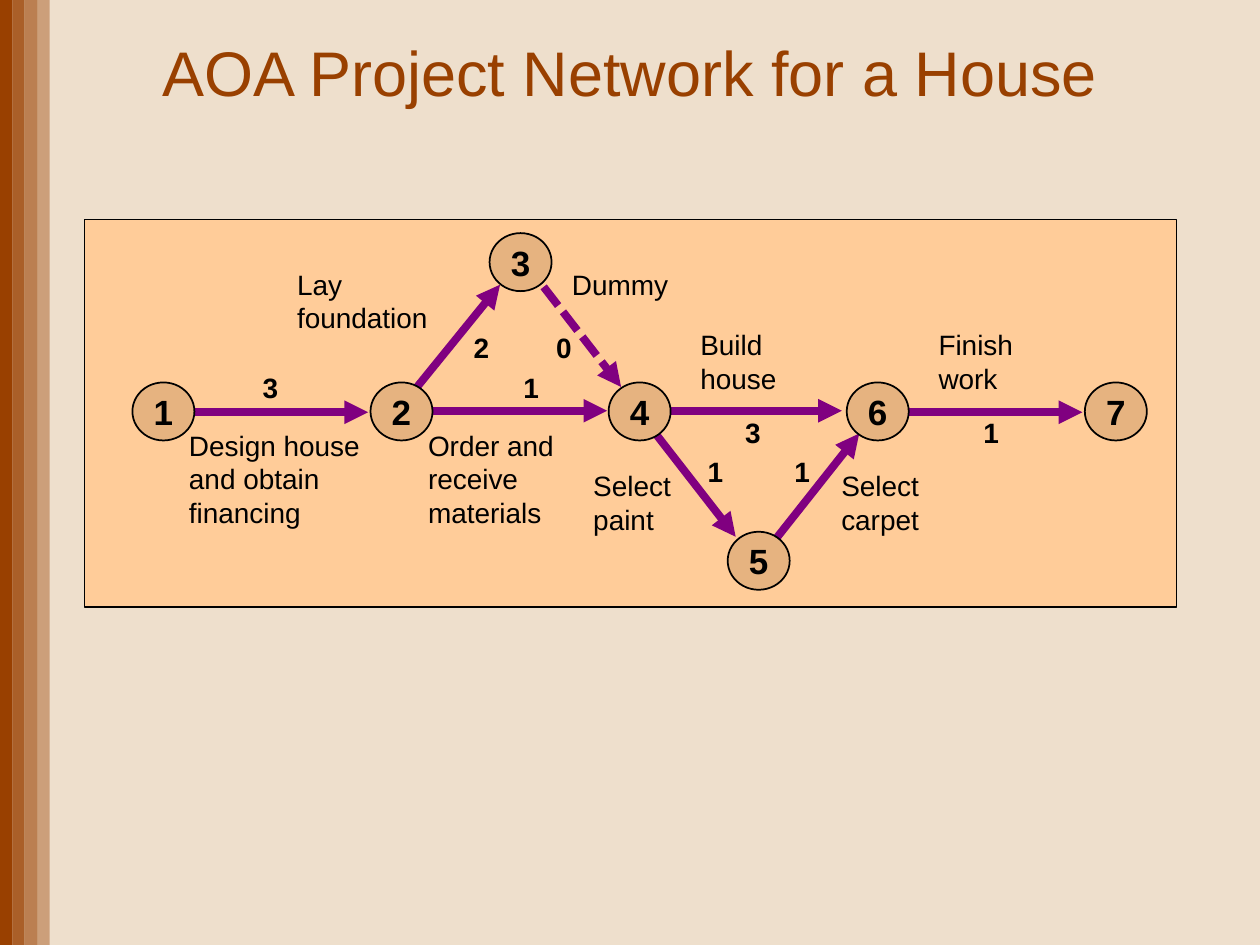
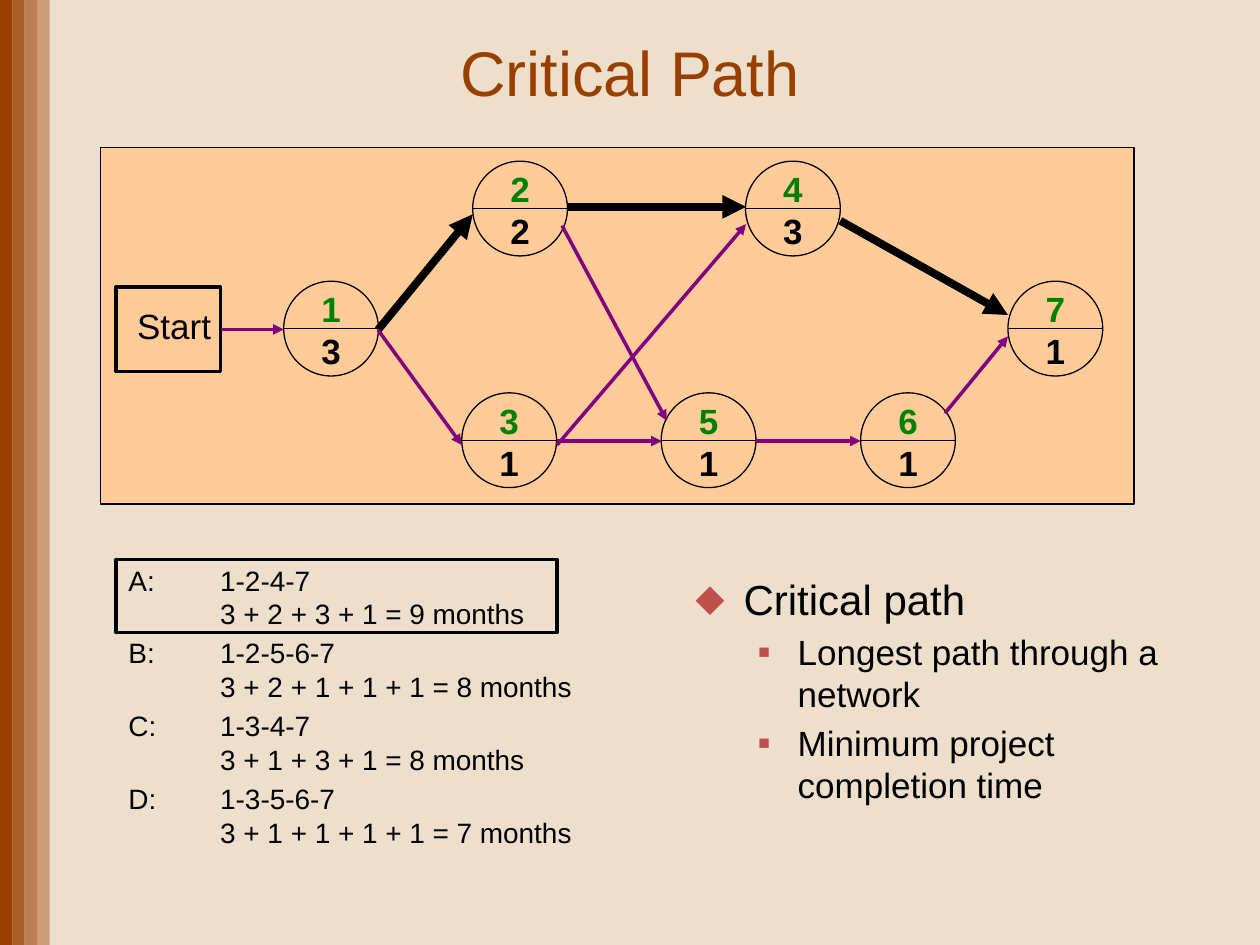
from dataclasses import dataclass
from typing import NamedTuple, Optional

from lxml import etree
from pptx import Presentation
from pptx import util as u
from pptx.dml.color import RGBColor
from pptx.enum import dml, shapes, text
from pptx.oxml.ns import qn


@dataclass(frozen=True)
class Theme:
    font: str = "Arial"
    background: str = "EEDFCC"
    brown: str = "994000"
    panel: str = "FFCC99"
    node: str = "E6B380"
    arrow: str = "800080"
    number: str = "008000"
    bullet: str = "C0504D"
    black: str = "000000"
    title_size: int = 36
    heading_size: int = 24
    body_size: int = 20
    label_size: int = 16
    thin: float = 0.75
    node_line: float = 1
    medium: float = 2
    thick: float = 4.5


THEME = Theme()
CENTER = text.PP_ALIGN.CENTER
LEFT = text.PP_ALIGN.LEFT
RECTANGLE = shapes.MSO_SHAPE.RECTANGLE
OVAL = shapes.MSO_SHAPE.OVAL


class Box(NamedTuple):
    left: float
    top: float
    width: float
    height: float


class Edge(NamedTuple):
    x1: float
    y1: float
    x2: float
    y2: float
    emphasis: bool = False


class Duration(NamedTuple):
    months: str
    left: float
    top: float
    width: float


class Activity(NamedTuple):
    name: str
    left: float
    top: float
    width: float
    lines: int


class Event(NamedTuple):
    number: str
    column: float
    row: int


class Task(NamedTuple):
    number: str
    months: str
    left: float
    top: float


class Route(NamedTuple):
    letter: str
    steps: str
    total: str


class Bullet(NamedTuple):
    wording: str
    symbol: str
    size: int
    margin: float
    indent: float
    percent: int
    before: float


DURATIONS = [
    Duration("3", 4.8, 7.34, 1.3), Duration("2", 9.25, 6.53, 0.91),
    Duration("0", 10.72, 6.53, 1.3), Duration("1", 10.06, 7.34, 1.3),
    Duration("3", 14.76, 8.26, 0.84), Duration("1", 14, 9.04, 0.84),
    Duration("1", 15.75, 9.04, 0.84), Duration("1", 19.56, 8.26, 0.84),
]
ACTIVITIES = [
    Activity("Lay foundation", 5.74, 5.26, 3.78, 2),
    Activity("Design house and obtain financing", 3.56, 8.51, 4.29, 3),
    Activity("Order and receive materials", 8.38, 8.51, 3.4, 3),
    Activity("Dummy", 11.28, 5.26, 3.07, 1),
    Activity("Finish work", 18.67, 6.48, 2.72, 2),
    Activity("Select carpet", 16.71, 9.32, 3.07, 2),
    Activity("Select paint", 11.71, 9.32, 2.77, 2),
    Activity("Build house", 13.87, 6.48, 2.77, 2),
]
DUMMY_EDGE = Edge(10.57, 5.28, 12.52, 7.8)
HOUSE_EDGES = [
    Edge(12.88, 8.31, 14.83, 10.82), Edge(15.39, 11.18, 17.32, 8.74),
    Edge(8.1, 8.18, 10.08, 5.74), Edge(17.7, 8.31, 21.82, 8.31),
    Edge(12.93, 8.28, 16.97, 8.28), Edge(8.08, 8.28, 12.24, 8.28),
    Edge(3.33, 8.31, 7.42, 8.31),
]
EVENTS = [
    Event("1", 0, 1), Event("2", 1, 1), Event("4", 2, 1), Event("6", 3, 1),
    Event("7", 4, 1), Event("3", 1.5, 0), Event("5", 2.5, 2),
]
UPPER, MIDDLE, LOWER = 3.25, 5.67, 7.92
TASKS = [
    Task("1", "3", 5.72, MIDDLE), Task("2", "2", 9.53, UPPER),
    Task("4", "3", 15.03, UPPER),
    *(Task(number, "1", 9.31 + 4.02 * column, LOWER) for column, number in enumerate("356")),
    Task("7", "1", 20.32, MIDDLE),
]
START_EDGE = Edge(4.45, 6.64, 5.72, 6.64)
TASK_EDGES = [
    Edge(7.62, 6.65, 9.53, 4.32, True), Edge(7.62, 6.65, 9.31, 8.97),
    Edge(11.23, 8.97, 15.04, 4.52), Edge(11.43, 4.17, 15.04, 4.17, True),
    Edge(16.94, 4.45, 20.32, 6.35, True), Edge(11.33, 4.55, 13.44, 8.48),
    Edge(11.23, 8.89, 13.34, 8.89), Edge(19.05, 8.33, 20.32, 6.78),
    Edge(15.24, 8.89, 17.35, 8.89),
]
ROUTES = [
    Route("A:", "1-2-4-7", "3 + 2 + 3 + 1 = 9 months"),
    Route("B:", "1-2-5-6-7", "3 + 2 + 1 + 1 + 1 = 8 months"),
    Route("C:", "1-3-4-7", "3 + 1 + 3 + 1 = 8 months"),
    Route("D:", "1-3-5-6-7", "3 + 1 + 1 + 1 + 1 = 7 months"),
]
BULLETS = [
    Bullet("Critical path", "⬥", THEME.heading_size, 0.97, -0.97, 100, 0),
    *(Bullet(wording, "■", THEME.body_size, 2.06, -0.79, 55, 4)
      for wording in ("Longest path through a network", "Minimum project completion time")),
]


def lengths(box: Box) -> list:
    return [u.Cm(value) for value in box]


def add_run(paragraph, wording: str, size: int, color: str = THEME.black, bold: bool = False) -> None:
    run = paragraph.add_run()
    run.text = wording
    run.font.name = THEME.font
    run.font.size = u.Pt(size)
    run.font.bold = bold
    run.font.color.rgb = RGBColor.from_string(color)


def add_frame(slide, box: Box):
    frame = slide.shapes.add_textbox(*lengths(box)).text_frame
    frame.word_wrap = True
    return frame


def add_label(slide, box: Box, wording: str, size: int, color: str = THEME.black,
              bold: bool = False, align=CENTER):
    frame = add_frame(slide, box)
    paragraph = frame.paragraphs[0]
    paragraph.alignment = align
    add_run(paragraph, wording, size, color, bold)
    return frame


def add_block(slide, kind, box: Box, fill: Optional[str], width: float = 0):
    shape = slide.shapes.add_shape(kind, *lengths(box))
    shape.shadow.inherit = False
    if fill:
        shape.fill.solid()
        shape.fill.fore_color.rgb = RGBColor.from_string(fill)
    else:
        shape.fill.background()
    if width:
        shape.line.color.rgb = RGBColor.from_string(THEME.black)
        shape.line.width = u.Pt(width)
    else:
        shape.line.fill.background()
    return shape


def add_line(slide, edge: Edge, color: str, width: float, arrow: bool = True):
    ends = [u.Cm(value) for value in edge[:4]]
    connector = slide.shapes.add_connector(shapes.MSO_CONNECTOR.STRAIGHT, *ends)
    connector.line.color.rgb = RGBColor.from_string(color)
    connector.line.width = u.Pt(width)
    if arrow:
        etree.SubElement(connector.line._get_or_add_ln(), qn("a:tailEnd"), type="triangle")
    etree.SubElement(connector._element.spPr, qn("a:effectLst"))
    return connector


def set_indent(paragraph, margin: float, indent: float):
    properties = paragraph._p.get_or_add_pPr()
    properties.set("marL", str(u.Cm(margin)))
    properties.set("indent", str(u.Cm(indent)))
    return properties


def add_slide(presentation, title: str):
    slide = presentation.slides.add_slide(presentation.slide_layouts[6])
    slide.background.fill.solid()
    slide.background.fill.fore_color.rgb = RGBColor.from_string(THEME.background)
    for position, opacity in enumerate((100, 80, 60, 40)):
        band = add_block(slide, RECTANGLE, Box(0.25 * position, 0, 0.25, 19.05), THEME.brown)
        color = band.fill._xPr.find(qn("a:solidFill"))[0]
        etree.SubElement(color, qn("a:alpha"), val=str(opacity * 1000))
    frame = add_label(slide, Box(1.27, 0.43, 22.86, 2), title, THEME.title_size, THEME.brown)
    frame.vertical_anchor = text.MSO_ANCHOR.MIDDLE
    return slide


def add_event(slide, event: Event) -> None:
    box = Box(2.67 + 4.8 * event.column, 4.7 + 3.01 * event.row, 1.25, 1.17)
    frame = add_block(slide, OVAL, box, THEME.node, THEME.node_line).text_frame
    frame.word_wrap = False
    frame.vertical_anchor = text.MSO_ANCHOR.MIDDLE
    frame.paragraphs[0].alignment = CENTER
    add_run(frame.paragraphs[0], event.number, THEME.body_size, bold=True)


def add_task(slide, task: Task) -> None:
    size = 1.91
    middle = task.top + size / 2
    add_block(slide, OVAL, Box(task.left, task.top, size, size), THEME.panel, THEME.thin)
    add_line(slide, Edge(task.left, middle, task.left + size, middle), THEME.black, THEME.thin, False)
    rows = ((task.number, 0, THEME.number), (task.months, 0.85, THEME.black))
    for wording, offset, color in rows:
        box = Box(task.left + 0.42, task.top + offset, 1.07, 1.09)
        add_label(slide, box, wording, THEME.body_size, color, True)


def add_routes(slide) -> None:
    frame = add_frame(slide, Box(2.34, 11.23, 13.13, 4.45))
    for position, route in enumerate(ROUTES):
        paragraph = frame.add_paragraph() if position else frame.paragraphs[0]
        set_indent(paragraph, 1.85, -1.85)
        paragraph.space_before = u.Pt(3.2 if position else 0)
        add_run(paragraph, f"{route.letter}\t{route.steps}", THEME.label_size)
        paragraph.add_line_break()
        add_run(paragraph, route.total, THEME.label_size)


def add_bullets(slide) -> None:
    frame = add_frame(slide, Box(13.77, 11.43, 10.36, 5.51))
    for position, bullet in enumerate(BULLETS):
        paragraph = frame.add_paragraph() if position else frame.paragraphs[0]
        properties = set_indent(paragraph, bullet.margin, bullet.indent)
        color = etree.SubElement(properties, qn("a:buClr"))
        etree.SubElement(color, qn("a:srgbClr"), val=THEME.bullet)
        etree.SubElement(properties, qn("a:buSzPct"), val=str(bullet.percent * 1000))
        etree.SubElement(properties, qn("a:buFont"), typeface=THEME.font)
        etree.SubElement(properties, qn("a:buChar"), char=bullet.symbol)
        paragraph.space_before = u.Pt(bullet.before)
        add_run(paragraph, bullet.wording, bullet.size)


def build_house_network(presentation) -> None:
    slide = add_slide(presentation, "AOA Project Network for a House")
    add_block(slide, RECTANGLE, Box(1.7, 4.42, 22.02, 7.82), THEME.panel, THEME.thin)
    for duration in DURATIONS:
        box = Box(duration.left, duration.top, duration.width, 0.91)
        add_label(slide, box, duration.months, THEME.label_size, bold=True)
    dummy = add_line(slide, DUMMY_EDGE, THEME.arrow, THEME.thick)
    dummy.line.dash_style = dml.MSO_LINE.SQUARE_DOT
    for edge in HOUSE_EDGES:
        add_line(slide, edge, THEME.arrow, THEME.thick)
    for event in EVENTS:
        add_event(slide, event)
    for activity in ACTIVITIES:
        box = Box(activity.left, activity.top, activity.width, 0.22 + 0.69 * activity.lines)
        add_label(slide, box, activity.name, THEME.label_size, align=LEFT)


def build_critical_path(presentation) -> None:
    slide = add_slide(presentation, "Critical Path")
    add_bullets(slide)
    add_routes(slide)
    add_block(slide, RECTANGLE, Box(2.34, 11.28, 8.89, 1.47), None, THEME.medium)
    add_block(slide, RECTANGLE, Box(2.03, 2.97, 20.83, 7.19), THEME.panel, THEME.thin)
    for task in TASKS:
        add_task(slide, task)
    start = add_block(slide, RECTANGLE, Box(2.34, 5.79, 2.11, 1.7), THEME.panel, THEME.medium)
    add_label(slide, Box(2.34, 6.02, 2.34, 1.09), "Start", THEME.body_size)
    add_line(slide, START_EDGE, THEME.arrow, THEME.medium).begin_connect(start, 3)
    for edge in TASK_EDGES:
        color, width = (THEME.black, THEME.thick) if edge.emphasis else (THEME.arrow, THEME.medium)
        add_line(slide, edge, color, width)


def main() -> None:
    presentation = Presentation()
    presentation.slide_width = u.Cm(25.4)
    presentation.slide_height = u.Cm(19.05)
    build_house_network(presentation)
    build_critical_path(presentation)
    presentation.save("out.pptx")


if __name__ == "__main__":
    main()
